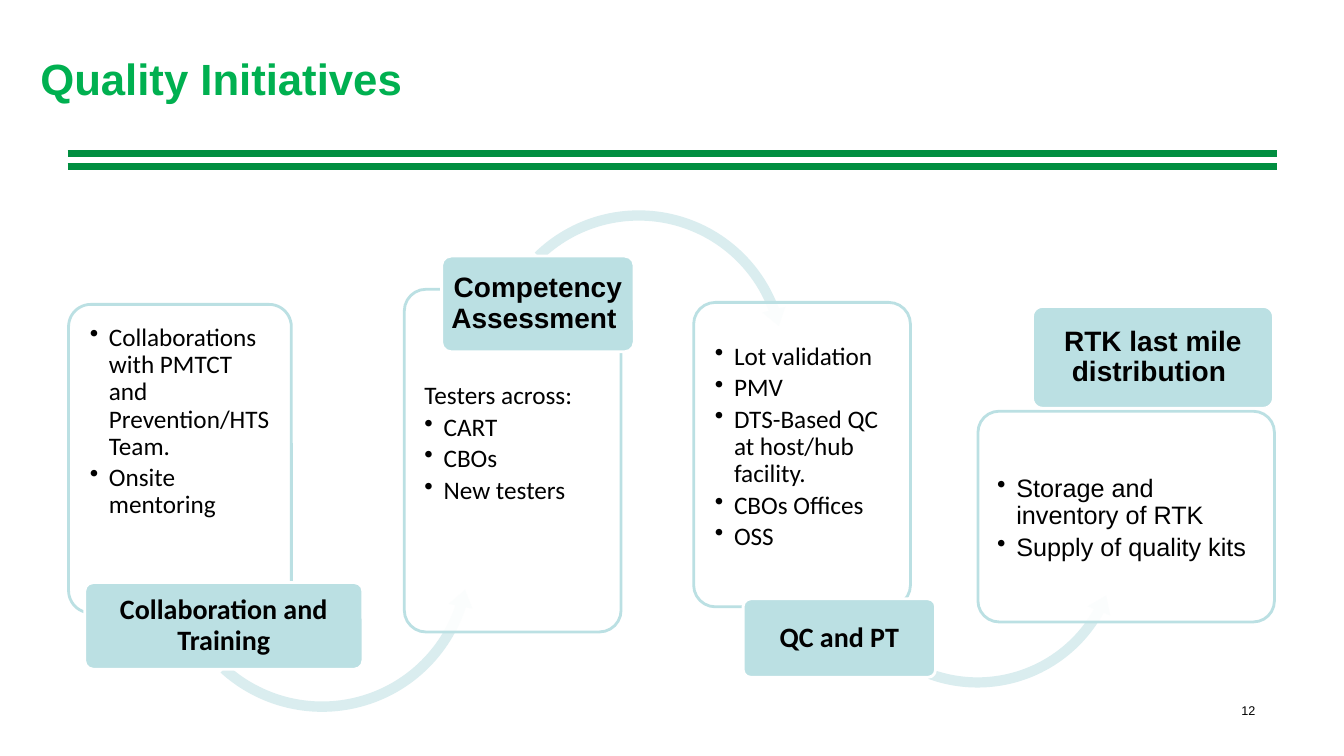
import pptx
import pptx.util
import pptx.dml.color
import pptx.enum.shapes
import pptx.enum.text
import pptx.oxml
import pptx.oxml.ns
from pptx.util import Inches

SHAPE = pptx.enum.shapes.MSO_SHAPE
ALIGN = pptx.enum.text.PP_ALIGN
ANCHOR = pptx.enum.text.MSO_ANCHOR
TEAL, PALE_TEAL, WHITE, BLACK = "BBE0E3", "DAEDEF", "FFFFFF", "000000"
GREEN, RULE_GREEN = "00B050", "008E40"

# Each stage: panel, body box, body font, lines (True for a bullet),
# label box, label text, label font, arrow to the next stage.
STAGES = [
    ((0.68, 3.02, 2.21, 3.06), (0.75, 3.08, 2.08, 2.27), "Calibri",
     [("Collaborations with PMTCT and Prevention/HTS Team.", True), ("Onsite mentoring", True)],
     (0.84, 5.78, 2.76, 0.86), "Collaboration and Training", "Calibri",
     (SHAPE.LEFT_CIRCULAR_ARROW, (1.63, 4, 3.13, 3.13), (0.033, 4.013, 10.866, 79.342, 0.038))),
    ((4.01, 2.87, 2.15, 3.4), (4.07, 3.66, 2.03, 2.55), "Calibri",
     [("Testers across:", False), ("CART", True), ("CBOs", True), ("New testers", True)],
     (4.38, 2.54, 1.91, 0.95), "Competency Assessment ", "Arial",
     (SHAPE.CIRCULAR_ARROW, (4.79, 2.02, 3.09, 3.09), (0.033, 4.07, 203.886, 135.466, 0.038))),
    ((6.88, 3, 2.15, 3.02), (6.95, 3.27, 2.03, 2.04), "Calibri",
     [("Lot validation", True), ("PMV", True), ("DTS-Based QC at host/hub facility.", True),
      ("CBOs Offices", True), ("OSS", True)],
     (7.37, 5.94, 1.91, 0.78), "QC and PT", "Calibri",
     (SHAPE.LEFT_CIRCULAR_ARROW, (8.2, 3.9, 2.99, 2.99), (0.034, 4.214, 17.346, 85.622, 0.04))),
    ((9.7, 4.08, 2.94, 2.09), (9.75, 4.58, 2.85, 1.55), "Arial",
     [("Storage and inventory of RTK", True), ("Supply of quality kits", True)],
     (10.24, 3.04, 2.39, 1.01), "RTK last mile distribution ", "Arial", None),
]


def colour(value):
    return pptx.dml.color.RGBColor.from_string(value)


def inches(lengths):
    return [Inches(length) for length in lengths]


def add_xml(parent, tag, **attributes):
    child = pptx.oxml.parse_xml(f"<a:{tag} {pptx.oxml.ns.nsdecls('a')}/>")
    for name, value in attributes.items():
        child.set(name, value)
    parent.append(child)


def style(para, font, size, shade=BLACK, bold=False):
    para.font.name = font
    para.font.size = pptx.util.Pt(size)
    para.font.bold = bold
    para.font.color.rgb = colour(shade)


def set_insets(frame, side, end):
    frame.word_wrap = True
    frame.margin_left = frame.margin_right = Inches(side)
    frame.margin_top = frame.margin_bottom = Inches(end)


def add_filled(page, kind, place, adjustments, fill, line=None):
    shape = page.shapes.add_shape(kind, *inches(place))
    shape.shadow.inherit = False
    for index, value in enumerate(adjustments):
        shape.adjustments[index] = value
    shape.fill.solid()
    shape.fill.fore_color.rgb = colour(fill)
    if line:
        shape.line.color.rgb = colour(line)
        shape.line.width = pptx.util.Pt(2)
    else:
        shape.line.fill.background()
    return shape


def add_panel(page, place):
    """Add a rounded white panel that lets the arrow behind it show faintly."""
    panel = add_filled(page, SHAPE.ROUNDED_RECTANGLE, place, [0.1], WHITE, TEAL)
    shade = panel.fill._xPr.find(".//" + pptx.oxml.ns.qn("a:srgbClr"))
    add_xml(shade, "alpha", val="90000")


def add_body(page, place, font, lines):
    frame = page.shapes.add_textbox(*inches(place)).text_frame
    set_insets(frame, 0.14, 0.14)
    for index, (text, bulleted) in enumerate(lines):
        para = frame.add_paragraph() if index else frame.paragraphs[0]
        para.text = text
        para.line_spacing = 0.9
        para.space_after = pptx.util.Pt(3)
        if bulleted:
            properties = para._p.get_or_add_pPr()
            properties.set("marL", str(Inches(0.19)))
            properties.set("indent", str(Inches(-0.19)))
            add_xml(properties, "buChar", char="•")
        style(para, font, 18)


def add_label(page, place, text, font):
    label = add_filled(page, SHAPE.ROUNDED_RECTANGLE, place, [0.1], TEAL, WHITE)
    frame = label.text_frame
    set_insets(frame, 0.04, 0.03)
    frame.vertical_anchor = ANCHOR.MIDDLE
    para = frame.paragraphs[0]
    para.text = text
    para.alignment = ALIGN.CENTER
    para.line_spacing = 0.9
    style(para, font, 20, bold=True)


def add_rule(page, top):
    rule = page.shapes.add_connector(
        pptx.enum.shapes.MSO_CONNECTOR.STRAIGHT, *inches((0.67, top, 12.67, top)))
    rule.line.color.rgb = colour(RULE_GREEN)
    rule.line.width = pptx.util.Pt(5)
    add_xml(rule._element.spPr, "effectLst")


def set_title(page, text):
    title = page.shapes.title
    title.left, title.top, title.width, title.height = inches((0.3, 0.45, 12.05, 0.71))
    frame = title.text_frame
    frame.vertical_anchor = ANCHOR.MIDDLE
    para = frame.paragraphs[0]
    para.text = text
    para.alignment = ALIGN.LEFT
    para.line_spacing = 0.9
    style(para, "Arial", 31.2, GREEN, bold=True)


def add_page_number(page, text):
    frame = page.shapes.add_textbox(*inches((9.44, 6.92, 3.11, 0.52))).text_frame
    frame.word_wrap = True
    para = frame.paragraphs[0]
    para.text = text
    para.alignment = ALIGN.RIGHT
    style(para, "Arial", 9)


def main():
    deck = pptx.Presentation()
    deck.slide_width, deck.slide_height = inches((13.33, 7.5))
    page = deck.slides.add_slide(deck.slide_layouts[5])
    set_title(page, "Quality Initiatives")
    for top in (1.52, 1.65):
        add_rule(page, top)
    for panel, body, font, lines, label, name, label_font, arrow in STAGES:
        add_panel(page, panel)
        add_body(page, body, font, lines)
        if arrow:
            add_filled(page, *arrow, PALE_TEAL)
        add_label(page, label, name, label_font)
    add_page_number(page, "12")
    deck.save("out.pptx")


if __name__ == "__main__":
    main()
